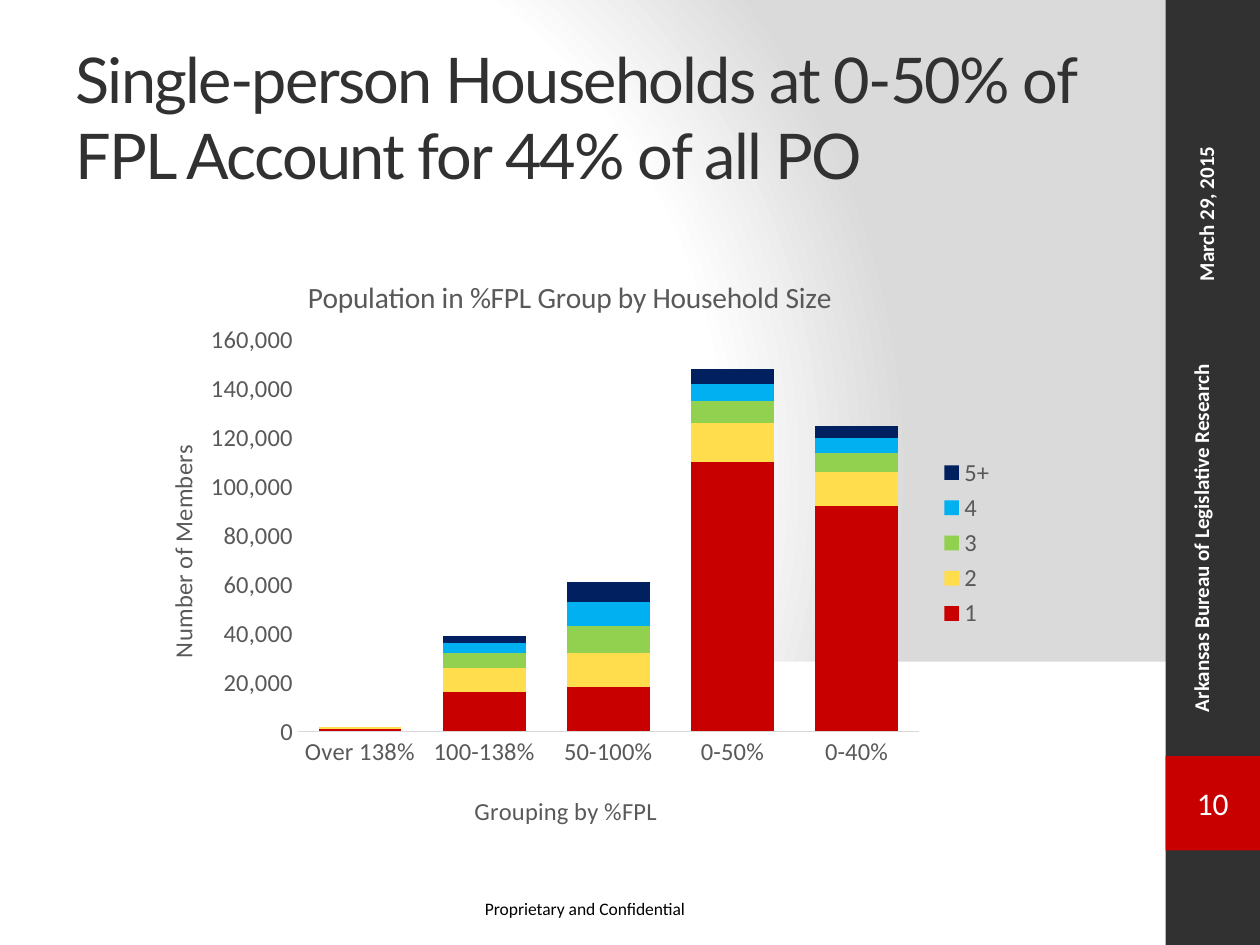
import pptx
import pptx.chart.data
import pptx.dml.color
import pptx.enum.chart
import pptx.enum.shapes
import pptx.enum.text
import pptx.oxml
import pptx.oxml.ns
import pptx.util
from pptx.util import Inches

DARK, RED, WHITE, GREY = "313131", "C90000", "FFFFFF", "595959"
CATEGORIES = ["Over 138%", "100-138%", "50-100%", "0-50%", "0-40%"]
HOUSEHOLDS = [
    ("1", RED, [1000, 16000, 18000, 110000, 92000]),
    ("2", "FFDD4D", [1000, 10000, 14000, 16000, 14000]),
    ("3", "92D050", [0, 6000, 11000, 9000, 8000]),
    ("4", "00B0F0", [0, 4000, 10000, 7000, 6000]),
    ("5+", "002060", [0, 3000, 8000, 6000, 5000]),
]


def rgb(value):
    return pptx.dml.color.RGBColor.from_string(value)


def style_font(font, size, color, name="Calibri", bold=False):
    font.name = name
    font.size = pptx.util.Pt(size)
    font.bold = bold
    font.color.rgb = rgb(color)


def chart_layout(x, y, width=None, height=None):
    values = [("xMode", "edge"), ("yMode", "edge"), ("x", x), ("y", y)]
    if width:
        values = [("layoutTarget", "inner")] + values + [("w", width), ("h", height)]
    items = "".join(f'<c:{tag} val="{value}"/>' for tag, value in values)
    return pptx.oxml.parse_xml(
        f'<c:layout {pptx.oxml.ns.nsdecls("c")}><c:manualLayout>{items}</c:manualLayout></c:layout>')


class SlideBuilder:
    def __init__(self, deck):
        self.page = deck.slides.add_slide(deck.slide_layouts[5])

    def background(self, stops, left, top, right, bottom):
        items = "".join(
            f'<a:gs pos="{position * 1000}"><a:srgbClr val="{color}"/></a:gs>'
            for position, color in stops)
        xml = (f'<p:bg {pptx.oxml.ns.nsdecls("p", "a")}><p:bgPr><a:gradFill rotWithShape="1">'
               f'<a:gsLst>{items}</a:gsLst><a:path path="circle"><a:fillToRect l="{left * 1000}" '
               f't="{top * 1000}" r="{right * 1000}" b="{bottom * 1000}"/></a:path></a:gradFill>'
               '<a:effectLst/></p:bgPr></p:bg>')
        self.page.element.find(pptx.oxml.ns.qn("p:cSld")).insert(0, pptx.oxml.parse_xml(xml))

    def title(self, text, left, top, width, height):
        box = self.page.shapes.title
        box.left, box.top = Inches(left), Inches(top)
        box.width, box.height = Inches(width), Inches(height)
        frame = box.text_frame
        frame.text = text
        frame.word_wrap = True
        frame.auto_size = pptx.enum.text.MSO_AUTO_SIZE.NONE
        frame.vertical_anchor = pptx.enum.text.MSO_ANCHOR.MIDDLE
        para = frame.paragraphs[0]
        para.alignment = pptx.enum.text.PP_ALIGN.LEFT
        span = para.runs[0]
        style_font(span.font, 36, DARK, "Lato")
        span.font._element.set("spc", "-100")

    def rectangle(self, color, left, top, width, height, text=""):
        box = self.page.shapes.add_shape(
            pptx.enum.shapes.MSO_SHAPE.RECTANGLE,
            Inches(left), Inches(top), Inches(width), Inches(height))
        box.shadow.inherit = False
        box.fill.solid()
        box.fill.fore_color.rgb = rgb(color)
        box.line.fill.background()
        if text:
            box.text_frame.text = text
            box.text_frame.vertical_anchor = pptx.enum.text.MSO_ANCHOR.MIDDLE
            para = box.text_frame.paragraphs[0]
            para.alignment = pptx.enum.text.PP_ALIGN.CENTER
            style_font(para.runs[0].font, 18, WHITE)

    def label(self, text, left, top, width, height, size, color, upright=False):
        box = self.page.shapes.add_textbox(
            Inches(left), Inches(top), Inches(width), Inches(height))
        frame = box.text_frame
        frame.text = text
        frame.word_wrap = upright
        if upright:
            frame._txBody.bodyPr.set("vert", "vert270")
        style_font(frame.paragraphs[0].runs[0].font, size, color, bold=upright)

    def caption(self, owner, text, size, x, y):
        owner.has_title = True
        title = owner.chart_title if hasattr(owner, "chart_title") else owner.axis_title
        title.text_frame.text = text
        style_font(title.text_frame.paragraphs[0].runs[0].font, size, GREY)
        element = title._element
        for old in element.findall(pptx.oxml.ns.qn("c:layout")):
            element.remove(old)
        element.find(pptx.oxml.ns.qn("c:tx")).addnext(chart_layout(x, y))

    def stacked_chart(self, left, top, width, height):
        data = pptx.chart.data.CategoryChartData(number_format="#,##0")
        data.categories = CATEGORIES
        for name, color, values in HOUSEHOLDS:
            data.add_series(name, values)
        chart = self.page.shapes.add_chart(
            pptx.enum.chart.XL_CHART_TYPE.COLUMN_STACKED,
            Inches(left), Inches(top), Inches(width), Inches(height), data).chart
        style_font(chart.font, 14, GREY)
        plot = chart.plots[0]
        plot.gap_width, plot.overlap = 50, 100
        plot.vary_by_categories = False
        for series, (name, color, values) in zip(plot.series, HOUSEHOLDS):
            series.format.fill.solid()
            series.format.fill.fore_color.rgb = rgb(color)
        for axis in (chart.category_axis, chart.value_axis):
            axis.has_major_gridlines = False
            axis.major_tick_mark = pptx.enum.chart.XL_TICK_MARK.NONE
            axis.minor_tick_mark = pptx.enum.chart.XL_TICK_MARK.NONE
            style_font(axis.tick_labels.font, 14, GREY)
        chart.category_axis.format.line.color.rgb = rgb("D9D9D9")
        chart.category_axis.format.line.width = pptx.util.Pt(0.75)
        chart.value_axis.format.line.fill.background()
        chart.value_axis.minimum_scale = 0
        chart.value_axis.maximum_scale = 160000
        chart.value_axis.major_unit = 20000
        chart.value_axis.tick_labels.number_format = "#,##0"
        chart.value_axis.tick_labels.number_format_is_linked = False
        self.caption(chart, "Population in %FPL Group by Household Size", 16.8, 0.2, 0.05)
        self.caption(chart.category_axis, "Grouping by %FPL", 14, 0.39, 0.91)
        self.caption(chart.value_axis, "Number of Members", 14, 0.04, 0.33)
        chart.has_legend = True
        chart.legend.position = pptx.enum.chart.XL_LEGEND_POSITION.RIGHT
        chart.legend.include_in_layout = False
        style_font(chart.legend.font, 14, GREY)
        area = chart._chartSpace.chart.plotArea
        for old in area.findall(pptx.oxml.ns.qn("c:layout")):
            area.remove(old)
        area.insert(0, chart_layout(0.195, 0.163, 0.704, 0.65))


def main():
    deck = pptx.Presentation()
    deck.slide_width, deck.slide_height = Inches(10), Inches(7.5)
    slide = SlideBuilder(deck)
    slide.background([(0, WHITE), (75, WHITE), (100, "DADADA")], 20, 50, 100, 50)
    slide.rectangle(WHITE, 0, 5.25, 9.33, 2.25)
    slide.rectangle(DARK, 9.25, 0, 0.75, 7.5)
    slide.rectangle(RED, 9.25, 6, 0.75, 0.75, "10")
    slide.label("Proprietary and Confidential", 3.75, 7.08, 1.81, 0.27, 10, "000000")
    slide.label("Arkansas Bureau of Legislative Research", 9.38, 2.33, 0.4, 3.42, 12, WHITE, True)
    slide.label("March 29, 2015", 9.42, 0.5, 0.61, 1.83, 12, WHITE, True)
    slide.title("Single-person Households at 0-50% of FPL Account for 44% of all PO",
                0.5, 0.3, 8.33, 1.25)
    slide.stacked_chart(1, 1.92, 7, 4.78)
    deck.save("out.pptx")


if __name__ == "__main__":
    main()
